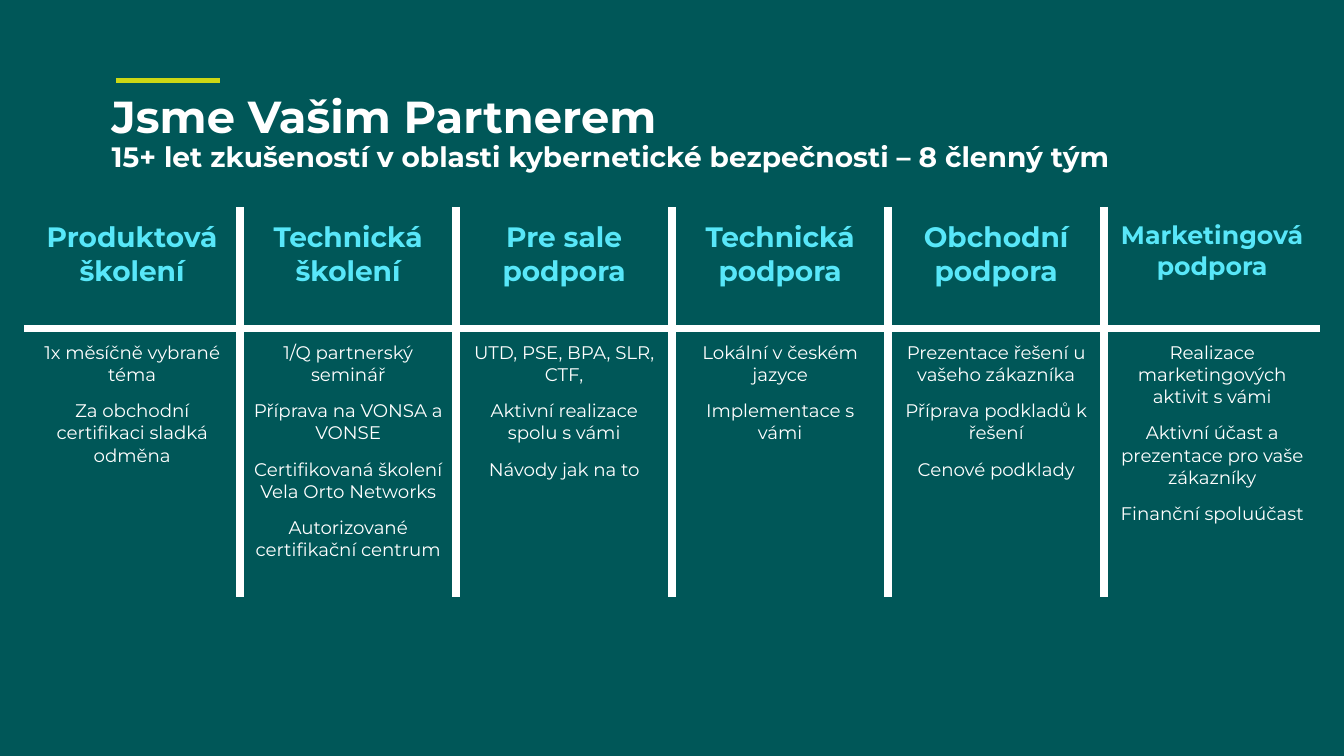
import pptx
import pptx.dml.color
import pptx.enum.shapes
import pptx.enum.text
import pptx.oxml
import pptx.oxml.ns
import pptx.util

Pt = pptx.util.Pt
RGBColor = pptx.dml.color.RGBColor
CENTER = pptx.enum.text.PP_ALIGN.CENTER

TEAL = RGBColor(0x00, 0x57, 0x58)
LIME = RGBColor(0xCC, 0xD8, 0x14)
CYAN = RGBColor(0x58, 0xE7, 0xF9)
WHITE = RGBColor(0xFF, 0xFF, 0xFF)
FONT = "Montserrat"

COLUMN_WIDTH = 154.3
ROW_HEIGHTS = (87, 191.5)
CELL_INSET = 9.36

SERVICES = [
    ("Produktová školení", 20,
     ["1x měsíčně vybrané téma", "Za obchodní certifikaci sladká odměna"]),
    ("Technická školení", 20,
     ["1/Q partnerský seminář", "Příprava na VONSA a VONSE",
      "Certifikovaná školení Vela Orto Networks",
      "Autorizované certifikační centrum"]),
    ("Pre sale podpora", 20,
     ["UTD, PSE, BPA, SLR, CTF,", "Aktivní realizace spolu s vámi",
      "Návody jak na to"]),
    ("Technická podpora", 20,
     ["Lokální v českém jazyce", "Implementace s vámi"]),
    ("Obchodní podpora", 20,
     ["Prezentace řešení u vašeho zákazníka", "Příprava podkladů k řešení",
      "Cenové podklady"]),
    ("Marketingová podpora", 18,
     ["Realizace marketingových aktivit s vámi",
      "Aktivní účast a prezentace pro vaše zákazníky",
      "Finanční spoluúčast"]),
]


def add_run(paragraph, text, size, color, bold):
    run = paragraph.add_run()
    run.text = text
    run.font.name = FONT
    run.font.size = Pt(size)
    run.font.bold = bold
    run.font.color.rgb = color


def set_borders(cell, visible):
    """Draw white borders on the sides in visible (of "LRTB"), none on the rest."""
    properties = cell._tc.get_or_add_tcPr()
    for position, side in enumerate("LRTB"):
        if side in visible:
            paint = f'<a:solidFill><a:srgbClr val="{WHITE}"/></a:solidFill>'
        else:
            paint = "<a:noFill/>"
        border = pptx.oxml.parse_xml(
            f'<a:ln{side} {pptx.oxml.ns.nsdecls("a")} w="{Pt(6)}">{paint}</a:ln{side}>')
        properties.insert(position, border)


presentation = pptx.Presentation()
presentation.slide_width = Pt(960)
presentation.slide_height = Pt(540)
slide = presentation.slides.add_slide(presentation.slide_layouts[6])
slide.background.fill.solid()
slide.background.fill.fore_color.rgb = TEAL

# Title with its accent line
accent = slide.shapes.add_connector(
    pptx.enum.shapes.MSO_CONNECTOR.STRAIGHT, Pt(82.8), Pt(57.4), Pt(157), Pt(57.4))
accent.line.color.rgb = LIME
accent.line.width = Pt(4)
accent._element.spPr.append(
    pptx.oxml.parse_xml(f'<a:effectLst {pptx.oxml.ns.nsdecls("a")}/>'))

title = slide.shapes.add_textbox(Pt(72.7), Pt(43.9), Pt(828), Pt(104.4)).text_frame
title.word_wrap = True
title.vertical_anchor = pptx.enum.text.MSO_ANCHOR.MIDDLE
headline = title.paragraphs[0]
headline.line_spacing = 0.9
add_run(headline, "Jsme Vašim Partnerem", 32, WHITE, True)
headline.add_line_break()
add_run(headline, "15+ let zkušeností v oblasti kybernetické bezpečnosti – 8 členný tým",
        20, WHITE, True)

# Service table: heading row above a row of details
services = slide.shapes.add_table(
    2, len(SERVICES), Pt(17.2), Pt(147.7),
    Pt(COLUMN_WIDTH * len(SERVICES)), Pt(sum(ROW_HEIGHTS))).table
services.first_row = False
services.horz_banding = False
for row, height in zip(services.rows, ROW_HEIGHTS):
    row.height = Pt(height)

for index, (heading, heading_size, details) in enumerate(SERVICES):
    services.columns[index].width = Pt(COLUMN_WIDTH)
    sides = ("L" if index > 0 else "") + ("R" if index < len(SERVICES) - 1 else "")
    heading_cell = services.cell(0, index)
    details_cell = services.cell(1, index)
    for cell, inner_side in ((heading_cell, "B"), (details_cell, "T")):
        cell.margin_left = cell.margin_right = Pt(CELL_INSET)
        cell.margin_top = cell.margin_bottom = Pt(CELL_INSET)
        cell.fill.background()
        set_borders(cell, sides + inner_side)

    heading_line = heading_cell.text_frame.paragraphs[0]
    heading_line.alignment = CENTER
    add_run(heading_line, heading, heading_size, CYAN, True)

    details_text = details_cell.text_frame
    for number, detail in enumerate(details):
        line = details_text.add_paragraph() if number else details_text.paragraphs[0]
        line.alignment = CENTER
        line.space_before = Pt(10 if number else 0)
        add_run(line, detail, 13, WHITE, False)

presentation.save("out.pptx")
